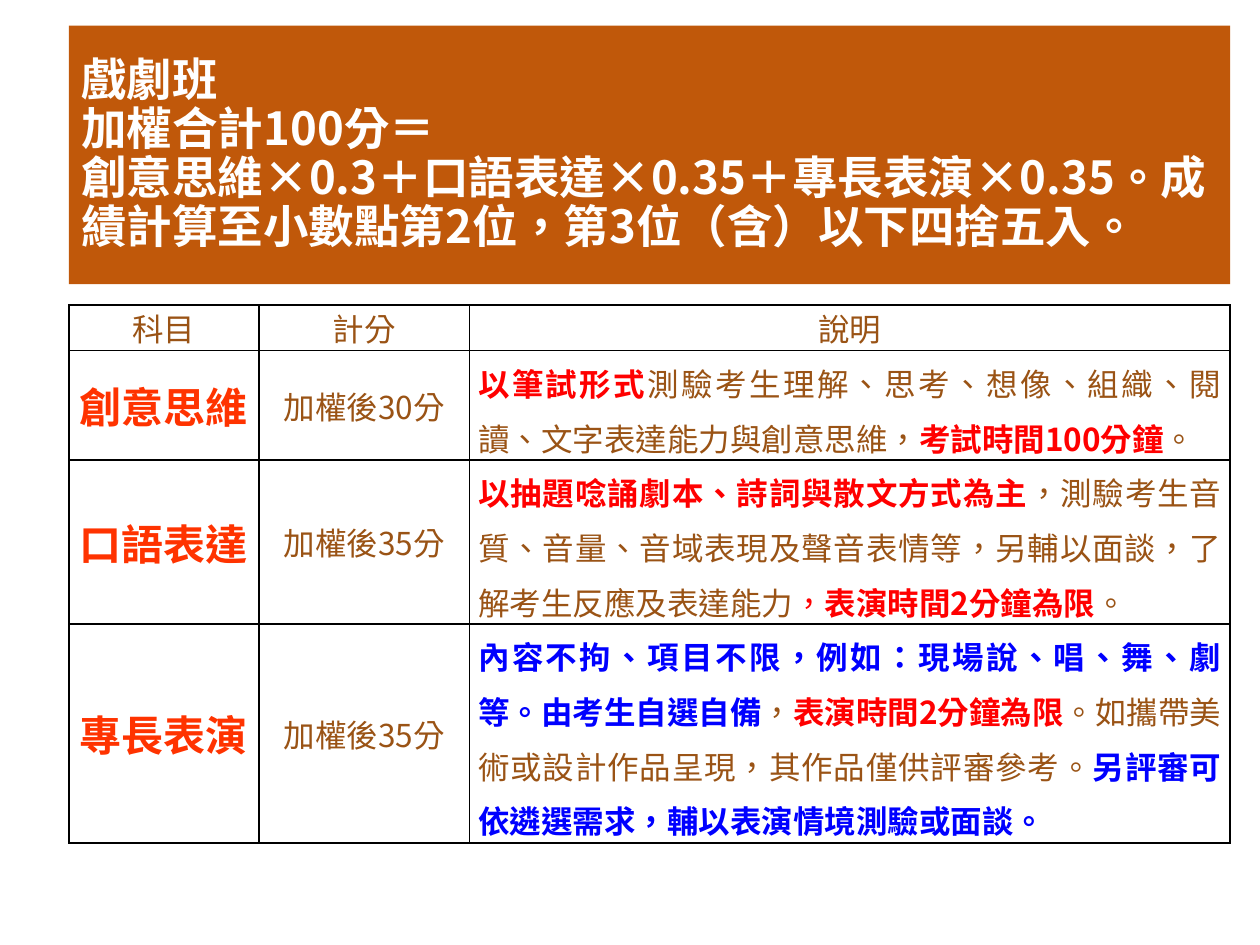
from lxml.etree import SubElement
from pptx import Presentation
from pptx.dml.color import RGBColor
from pptx.enum.lang import MSO_LANGUAGE_ID as Lang
from pptx.enum.shapes import MSO_SHAPE as Shape
from pptx.enum.text import MSO_ANCHOR as Anchor, PP_ALIGN as Align
from pptx.oxml.ns import qn
from pptx.util import Cm, Pt

FONT = "Noto Sans CJK SC"
HEADING = [
    "戲劇班",
    "加權合計100分＝",
    "創意思維×0.3＋口語表達×0.35＋專長表演×0.35。"
    "成績計算至小數點第2位，第3位（含）以下四捨五入。",
]
STYLES = {
    "heading": {"size": Pt(26), "bold": True, "color": "FFFFFF"},
    "subject": {"size": Pt(24), "bold": True, "color": "FF3300"},
    "plain": {"size": Pt(18), "bold": False, "color": "9A5315"},
    "red": {"size": Pt(18), "bold": True, "color": "FF0000"},
    "red light": {"size": Pt(18), "bold": False, "color": "FF0000"},
    "blue": {"size": Pt(18), "bold": True, "color": "0000FF"},
}
COLUMNS = ["科目", "計分", "說明"]
# subject, score, lines of description, description spans
SUBJECTS = [
    ("創意思維", "加權後30分", 2, [
        ("以筆試形式", "red"),
        ("測驗考生理解、思考、想像、組織、閱讀、文字表達能力與創意思維，", "plain"),
        ("考試時間100分鐘", "red"),
        ("。", "plain"),
    ]),
    ("口語表達", "加權後35分", 3, [
        ("以抽題唸誦劇本、詩詞與散文方式為主", "red"),
        ("，測驗考生音質、音量、音域表現及聲音表情等，另輔以面談，"
         "了解考生反應及表達能力", "plain"),
        ("，", "red light"),
        ("表演時間2分鐘為限", "red"),
        ("。", "plain"),
    ]),
    ("專長表演", "加權後35分", 4, [
        ("內容不拘、項目不限，例如：現場說、唱、舞、劇等。由考生自選自備", "blue"),
        ("，", "plain"),
        ("表演時間2分鐘為限", "red"),
        ("。如攜帶美術或設計作品呈現，其作品僅供評審參考。", "plain"),
        ("另評審可依遴選需求，輔以表演情境測驗或面談。", "blue"),
    ]),
]
LEFT = 1.39
HEADING_TOP, HEADING_HEIGHT = 0.52, 5.21
TABLE_TOP = 6.15
COLUMN_WIDTHS = [3.83, 4.24, 15.34]
HEADER_HEIGHT, LINE_HEIGHT = 0.76, 0.91
WIDTH = sum(COLUMN_WIDTHS)


def rgb(color):
    return RGBColor.from_string(color)


def add_spans(para, spans):
    for text, style in spans:
        span = para.add_run()
        span.text = text
        font = span.font
        values = dict(STYLES[style], name=FONT, language_id=Lang.TRADITIONAL_CHINESE)
        font.color.rgb = rgb(values.pop("color"))
        for name, value in values.items():
            setattr(font, name, value)
        SubElement(span._r.get_or_add_rPr(), qn("a:ea"), typeface=FONT)


def add_borders(cell):
    properties = cell._tc.get_or_add_tcPr()
    for side in ("L", "R", "T", "B"):
        line = SubElement(properties, qn(f"a:ln{side}"), w=str(Pt(1)))
        fill = SubElement(line, qn("a:solidFill"))
        SubElement(fill, qn("a:srgbClr"), val="000000")


def fill_cell(cell, spans, anchor, align, spacing):
    add_borders(cell)
    cell.fill.background()
    layout = {"vertical_anchor": anchor, "margin_left": Cm(0.18),
              "margin_right": Cm(0.18), "margin_top": 0, "margin_bottom": 0}
    for name, value in layout.items():
        setattr(cell, name, value)
    para = cell.text_frame.paragraphs[0]
    para.alignment, para.line_spacing = align, spacing
    # keep punctuation inside the cell at line ends
    para._p.get_or_add_pPr().set("hangingPunct", "0")
    add_spans(para, spans)


def add_heading(page):
    box = page.shapes.add_shape(Shape.RECTANGLE, Cm(LEFT), Cm(HEADING_TOP),
                                Cm(WIDTH), Cm(HEADING_HEIGHT))
    box.shadow.inherit = False
    box.fill.solid()
    box.fill.fore_color.rgb = rgb("C0580A")
    box.line.fill.background()
    frame = box.text_frame
    frame.word_wrap, frame.vertical_anchor = True, Anchor.MIDDLE
    for index, text in enumerate(HEADING):
        para = frame.add_paragraph() if index else frame.paragraphs[0]
        para.alignment, para.line_spacing = Align.LEFT, 0.9
        add_spans(para, [(text, "heading")])


def add_subjects(page):
    heights = [HEADER_HEIGHT] + [LINE_HEIGHT * lines for _, _, lines, _ in SUBJECTS]
    table = page.shapes.add_table(len(heights), len(COLUMNS), Cm(LEFT), Cm(TABLE_TOP),
                                  Cm(WIDTH), Cm(sum(heights))).table
    for column, width in zip(table.columns, COLUMN_WIDTHS):
        column.width = Cm(width)
    for row, height in zip(table.rows, heights):
        row.height = Cm(height)
    for column, text in enumerate(COLUMNS):
        fill_cell(table.cell(0, column), [(text, "plain")], Anchor.TOP, Align.CENTER, 1.0)
    for row, (subject, score, _, description) in enumerate(SUBJECTS, start=1):
        contents = [
            ([(subject, "subject")], Align.CENTER, 1.0),
            ([(score, "plain")], Align.CENTER, 1.0),
            (description, Align.JUSTIFY, 1.2),
        ]
        for column, (spans, align, spacing) in enumerate(contents):
            fill_cell(table.cell(row, column), spans, Anchor.MIDDLE, align, spacing)


def main():
    deck = Presentation()
    deck.slide_width, deck.slide_height = Cm(25.4), Cm(19.05)
    page = deck.slides.add_slide(deck.slide_layouts[6])
    add_subjects(page)
    add_heading(page)
    deck.save("out.pptx")


if __name__ == "__main__":
    main()
